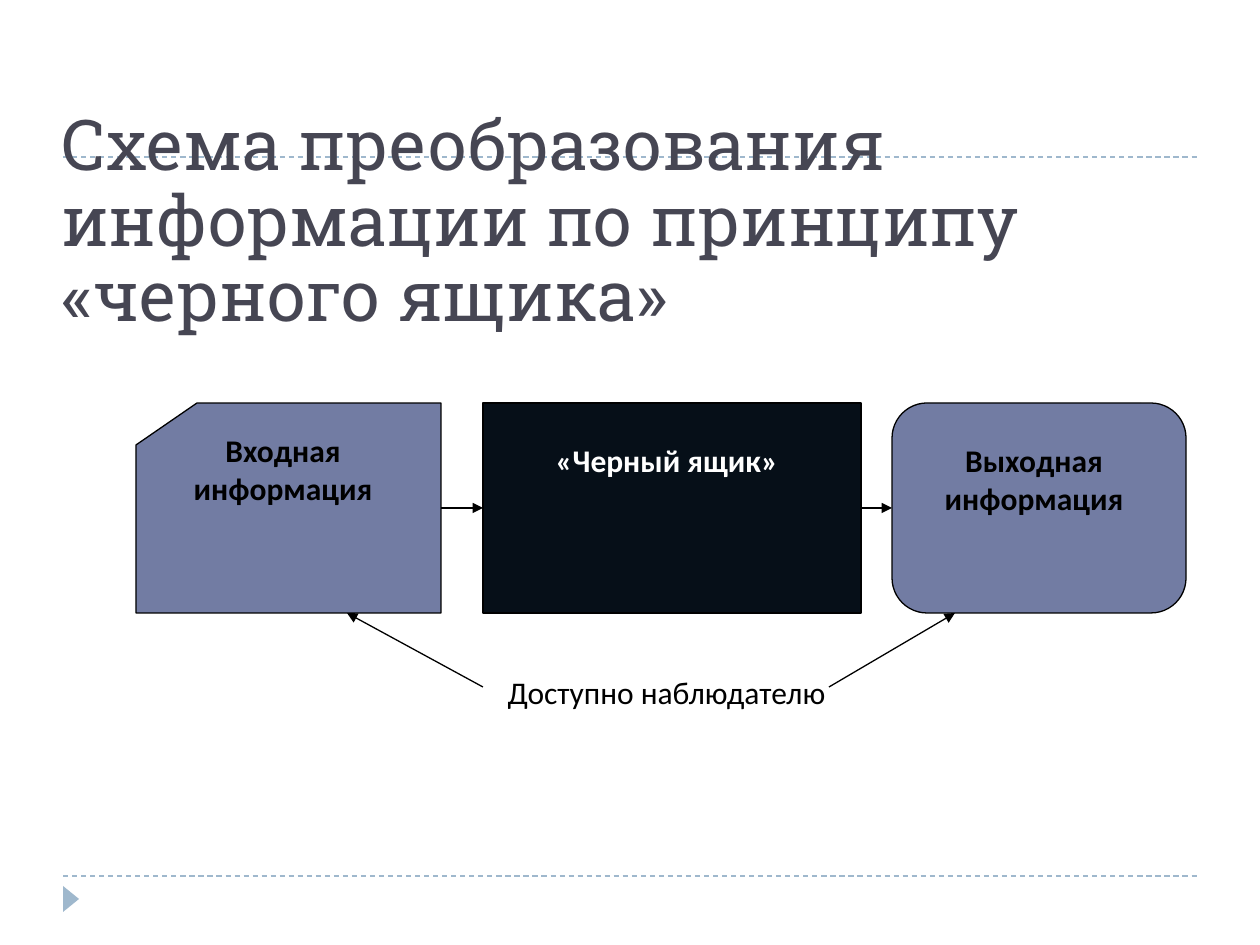
from dataclasses import dataclass

from lxml.etree import SubElement
from pptx import Presentation
from pptx.dml.color import RGBColor
from pptx.enum.dml import MSO_LINE
from pptx.enum.shapes import MSO_CONNECTOR, MSO_SHAPE as Preset
from pptx.enum.text import MSO_ANCHOR as Anchor, PP_ALIGN as Align
from pptx.oxml.ns import qn
from pptx.util import Pt

PX = 914400 / 126


@dataclass(frozen=True)
class Theme:
    title: str = "464653"
    accent: str = "9FB8CD"
    panel: str = "727CA3"
    dark: str = "060F18"
    ink: str = "000000"
    light: str = "FFFFFF"
    title_font: str = "Roboto Slab"
    body_font: str = "Calibri"
    title_size: int = 40
    body_size: int = 18
    line_width: float = 0.75


THEME = Theme()

# Content: places are left, top, width, height in px
TITLE = ("Схема преобразования информации по принципу «черного ящика»",
         (49, 69, 1071, 274))
STAGE_TOP, STAGE_HEIGHT = 403, 210
STAGES = [  # preset, left, width, fill, caption, caption place, caption colour
    (Preset.FLOWCHART_CARD, 136, 305, THEME.panel,
     "Входная информация", (136, 425, 294, 113), THEME.ink),
    (Preset.FLOWCHART_PROCESS, 483, 378, THEME.dark,
     "«Черный ящик»", (473, 435, 388, 63), THEME.light),
    (Preset.FLOWCHART_ALTERNATE_PROCESS, 892, 294, THEME.panel,
     "Выходная информация", (892, 435, 284, 113), THEME.ink),
]
OBSERVER = ("Доступно наблюдателю", (378, 667, 577, 63))
OBSERVER_ARROWS = [(483, 347), (829, 955)]  # start x, end x
OBSERVER_Y = 687
RULES_Y = (876, 157)
RULE_X = (63, 1197)
MARKER = (58, 891, 26, 16)


def emu(*lengths):
    return [round(length * PX) for length in lengths]


def rgb(value):
    return RGBColor.from_string(value)


def add_line(shapes, start, end, color, dashed=False, arrow=False):
    line = shapes.add_connector(MSO_CONNECTOR.STRAIGHT, *emu(*start, *end))
    line.line.color.rgb = rgb(color)
    line.line.width = Pt(THEME.line_width)
    if dashed:
        line.line.dash_style = MSO_LINE.DASH
    if arrow:
        SubElement(line.line._get_or_add_ln(), qn("a:tailEnd"), type="triangle")
    SubElement(line._element.spPr, qn("a:effectLst"))


def add_figure(shapes, preset, place, fill, outline=None):
    figure = shapes.add_shape(preset, *emu(*place))
    figure.shadow.inherit = False
    figure.fill.solid()
    figure.fill.fore_color.rgb = rgb(fill)
    if outline:
        figure.line.color.rgb = rgb(outline)
        figure.line.width = Pt(THEME.line_width)
    else:
        figure.line.fill.background()
    return figure


def add_text(shapes, text, place, font, size, color, bold=False,
             align=Align.CENTER, anchor=Anchor.TOP, spacing=None):
    frame = shapes.add_textbox(*emu(*place)).text_frame
    frame.word_wrap = True
    frame.vertical_anchor = anchor
    paragraph = frame.paragraphs[0]
    paragraph.alignment = align
    paragraph.line_spacing = spacing
    run = paragraph.add_run()
    run.text = text
    run.font.name = font
    run.font.size = Pt(size)
    run.font.bold = bold
    run.font.color.rgb = rgb(color)


def main():
    deck = Presentation()
    deck.slide_width, deck.slide_height = emu(1260, 945)
    slide = deck.slides.add_slide(deck.slide_layouts[6])

    # Page decoration
    for y in RULES_Y:
        add_line(slide.shapes, (RULE_X[0], y), (RULE_X[1], y),
                 THEME.accent, dashed=True)
    marker = add_figure(slide.shapes, Preset.ISOSCELES_TRIANGLE, MARKER,
                        THEME.accent)
    marker.rotation = 90

    # Title
    add_text(slide.shapes, *TITLE, THEME.title_font, THEME.title_size,
             THEME.title, align=Align.LEFT, anchor=Anchor.BOTTOM, spacing=0.9)

    # Stages, the arrows between them, and their captions
    diagram = slide.shapes.add_group_shape().shapes
    for preset, left, width, fill, *_ in STAGES:
        add_figure(diagram, preset, (left, STAGE_TOP, width, STAGE_HEIGHT),
                   fill, THEME.ink)
    middle = STAGE_TOP + STAGE_HEIGHT / 2
    for (_, left, width, *_), (_, next_left, *_) in zip(STAGES, STAGES[1:]):
        add_line(diagram, (left + width, middle), (next_left, middle),
                 THEME.ink, arrow=True)
    for *_, caption, place, color in STAGES:
        add_text(diagram, caption, place, THEME.body_font, THEME.body_size,
                 color, bold=True)

    # Observer note and its arrows
    add_text(diagram, *OBSERVER, THEME.body_font, THEME.body_size, THEME.ink)
    for start_x, end_x in OBSERVER_ARROWS:
        add_line(diagram, (start_x, OBSERVER_Y),
                 (end_x, STAGE_TOP + STAGE_HEIGHT), THEME.ink, arrow=True)

    deck.save("out.pptx")


if __name__ == "__main__":
    main()
